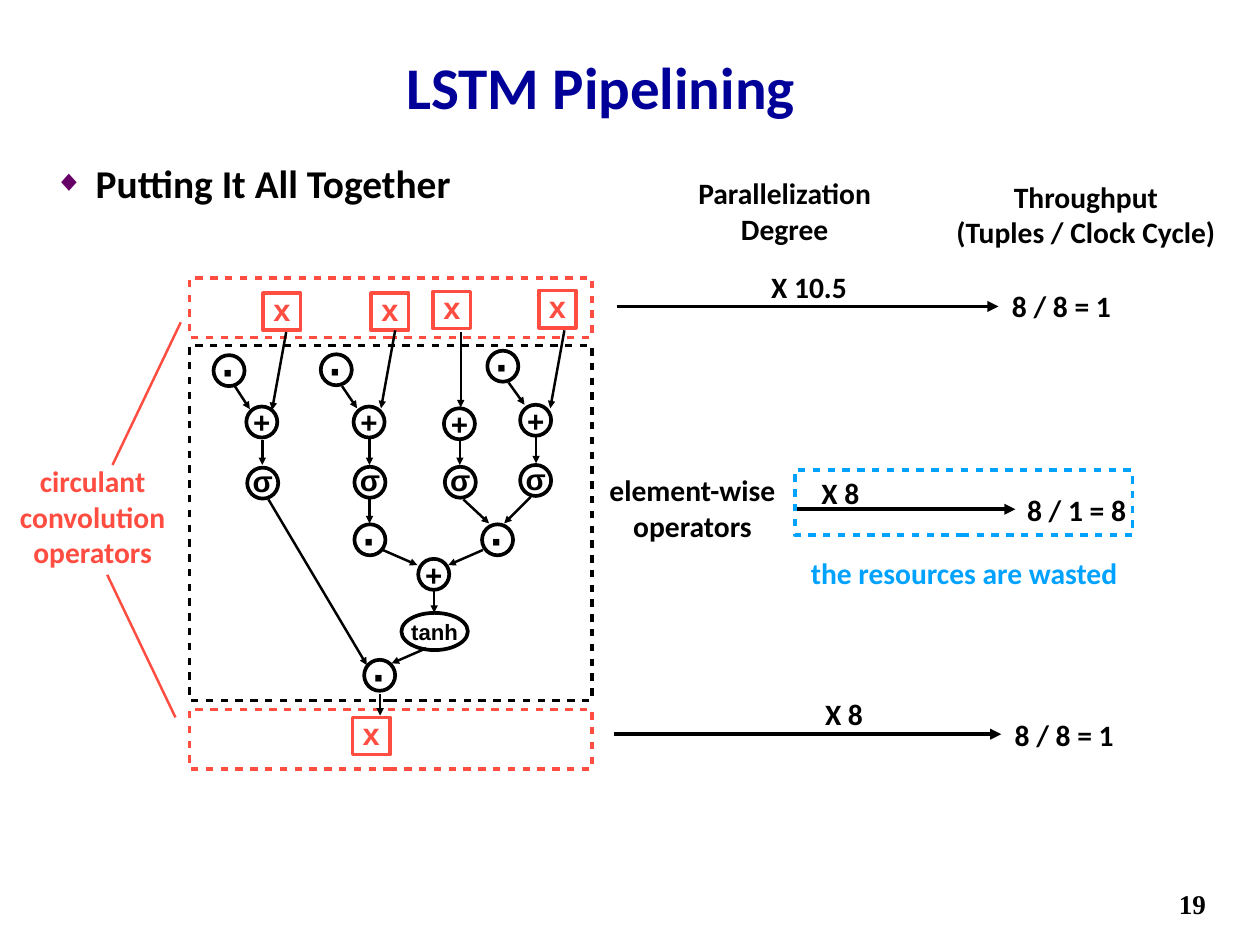
from dataclasses import dataclass
from lxml import etree
from pptx import Presentation
from pptx.dml.color import RGBColor
from pptx.enum.shapes import MSO_CONNECTOR, MSO_SHAPE
from pptx.enum.text import MSO_ANCHOR, MSO_AUTO_SIZE, PP_ALIGN
from pptx.oxml.ns import qn
from pptx.util import Inches, Pt

RECT, OVAL = MSO_SHAPE.RECTANGLE, MSO_SHAPE.OVAL
STRAIGHT = MSO_CONNECTOR.STRAIGHT
MIDDLE, TOP = MSO_ANCHOR.MIDDLE, MSO_ANCHOR.TOP
LEFT, CENTER, RIGHT = PP_ALIGN.LEFT, PP_ALIGN.CENTER, PP_ALIGN.RIGHT
NO_FIT = MSO_AUTO_SIZE.NONE


@dataclass(frozen=True)
class Theme:
    navy: str = "000099"
    black: str = "000000"
    red: str = "FF4D41"
    blue: str = "00A2FF"
    purple: str = "660066"
    text: str = "Calibri"
    symbol: str = "Arial"
    number: str = "Times New Roman"
    title_pt: int = 48
    body_pt: int = 32
    label_pt: int = 24
    number_pt: int = 22
    thin: int = 2
    thick: int = 3


T = Theme()


def write(sp, lines, size, color, font=T.text, align=CENTER, inset=0, bottom=0):
    """Fill a shape with bold one-run paragraphs."""
    tf = sp.text_frame
    tf.auto_size, tf.word_wrap, tf.vertical_anchor = NO_FIT, False, MIDDLE
    tf.margin_left = tf.margin_right = tf.margin_top = Inches(inset)
    tf.margin_bottom = Inches(inset + bottom)
    for i, line in enumerate(lines):
        p = tf.paragraphs[0] if i == 0 else tf.add_paragraph()
        p.alignment = align
        r = p.add_run()
        r.text = line
        r.font.name, r.font.size, r.font.bold = font, Pt(size), True
        r.font.color.rgb = RGBColor.from_string(color)
    return tf


def connect(x1, y1, x2, y2, width=T.thin, color=T.black, arrow=True):
    """Draw a straight line, with an arrowhead at its end if wanted."""
    cx = slide.shapes.add_connector(
        STRAIGHT, Inches(x1), Inches(y1), Inches(x2), Inches(y2))
    cx.line.width = Pt(width)
    cx.line.color.rgb = RGBColor.from_string(color)
    if arrow:
        etree.SubElement(cx.line._get_or_add_ln(), qn("a:tailEnd"), type="triangle")
    etree.SubElement(cx._element.spPr, qn("a:effectLst"))


prs = Presentation()
prs.slide_width, prs.slide_height = Inches(14.22), Inches(10.67)
slide = prs.slides.add_slide(prs.slide_layouts[1])

# Title
title = slide.shapes.title
title.left, title.top, title.width, title.height = map(Inches, (0.38, 0.5, 12.8, 1.05))
tf = write(title, ["LSTM Pipelining"], T.title_pt, T.navy)
tf.word_wrap = True
tf.paragraphs[0].line_spacing = 0.9

# Bulleted heading
body = slide.placeholders[1]
body.left, body.top, body.width, body.height = map(Inches, (0.54, 1.62, 5, 0.68))
tf = write(body, ["Putting It All Together"], T.body_pt, T.black, align=LEFT, inset=0.07)
tf.word_wrap, tf.vertical_anchor = True, TOP
p = tf.paragraphs[0]
p.line_spacing, p.space_before = 1.2, Pt(0)
pPr = p._p.get_or_add_pPr()
pPr.set("marL", str(Inches(0.47)))
pPr.set("indent", str(-Inches(0.47)))
bullet_color = etree.SubElement(pPr, qn("a:buClr"))
etree.SubElement(bullet_color, qn("a:srgbClr"), val=T.purple)
etree.SubElement(pPr, qn("a:buSzPct"), val="75000")
etree.SubElement(pPr, qn("a:buChar"), char="◆")

# Dashed frames: element-wise stage, two convolution stages, wasted resources
for x, y, w, h, color in [
    (2.14, 3.9, 4.54, 4.01, T.black),
    (2.14, 8.01, 4.54, 0.67, T.red),
    (2.14, 3.14, 4.54, 0.67, T.red),
    (8.97, 5.31, 3.81, 0.73, T.blue),
]:
    sp = slide.shapes.add_shape(RECT, Inches(x), Inches(y), Inches(w), Inches(h))
    sp.shadow.inherit = False
    sp.fill.background()
    sp.line.color.rgb = RGBColor.from_string(color)
    sp.line.width = Pt(T.thick)
    dash = etree.SubElement(sp.line._get_or_add_ln(), qn("a:custDash"))
    etree.SubElement(dash, qn("a:ds"), d="200000", sp="200000")

# Operator nodes: shape, width, height, type size, bottom inset, colour, places
for symbol, kind, w, h, size, bottom, color, places in [
    ("x", RECT, 0.42, 0.42, 25, 0.06, T.red,
     [(2.97, 3.31), (4.19, 3.31), (4.89, 3.29), (6.08, 3.28), (3.98, 8.1)]),
    ("·", OVAL, 0.35, 0.35, 36, 0, T.black,
     [(2.41, 4.01), (3.62, 4), (5.5, 3.96), (4, 5.92), (5.44, 5.92), (4.11, 7.45)]),
    ("+", OVAL, 0.35, 0.35, 24, 0, T.black,
     [(2.78, 4.59), (3.99, 4.59), (5.01, 4.61), (5.87, 4.57), (4.72, 6.31)]),
    ("σ", OVAL, 0.35, 0.35, 24, 0.05, T.black,
     [(2.79, 5.28), (4, 5.27), (5.02, 5.27), (5.87, 5.25)]),
    ("tanh", OVAL, 0.75, 0.42, 18, 0, T.black, [(4.53, 6.92)]),
]:
    for x, y in places:
        sp = slide.shapes.add_shape(kind, Inches(x), Inches(y), Inches(w), Inches(h))
        sp.shadow.inherit = False
        sp.fill.background()
        sp.line.color.rgb = RGBColor.from_string(color)
        sp.line.width = Pt(T.thick)
        write(sp, [symbol], size, color, T.symbol, bottom=bottom)

# Data flow between the nodes
for ends in [
    # convolutions to sums
    (3.23, 3.75, 3.07, 4.63), (4.46, 3.73, 4.3, 4.61),
    (5.2, 3.75, 5.2, 4.6), (6.37, 3.73, 6.21, 4.61),
    # products to sums
    (2.65, 4.36, 2.82, 4.62), (3.86, 4.36, 4.03, 4.61), (5.74, 4.32, 5.92, 4.57),
    # sums to sigmoids
    (2.96, 4.97, 2.96, 5.25), (4.17, 4.96, 4.17, 5.25),
    (5.19, 4.97, 5.19, 5.25), (6.05, 4.94, 6.05, 5.23),
    # sigmoids to products
    (3.03, 5.64, 4.14, 7.51), (4.17, 5.63, 4.17, 5.91),
    (5.23, 5.64, 5.52, 5.91), (5.99, 5.61, 5.69, 5.91),
    # cell state and output
    (4.32, 6.21, 4.71, 6.38), (5.45, 6.21, 5.06, 6.38),
    (4.9, 6.67, 4.9, 6.92), (4.81, 7.32, 4.42, 7.49), (4.29, 7.84, 4.29, 8.08),
]:
    connect(*ends)

# Leaders from the convolution label to its frames
connect(1.27, 5.25, 2.04, 3.64, color=T.red, arrow=False)
connect(1.21, 6.49, 1.98, 8.1, color=T.red, arrow=False)

# Throughput arrows
for x1, x2, y in [(6.96, 11.27, 3.46), (9, 11.46, 5.75), (6.93, 11.3, 8.29)]:
    connect(x1, y, x2, y, width=T.thick)

# Labels
for x, y, w, h, color, lines in [
    (6.78, 5.27, 2.07, 0.92, T.black, ["element-wise", "operators"]),
    (0.05, 5.17, 1.99, 1.32, T.red, ["circulant", "convolution", "operators"]),
    (7.78, 1.92, 2.15, 0.92, T.black, ["Parallelization", "Degree"]),
    (10.73, 1.96, 3.05, 0.92, T.black, ["Throughput", "(Tuples / Clock Cycle)"]),
    (8.64, 2.98, 0.98, 0.51, T.black, ["X 10.5"]),
    (9.21, 5.31, 0.55, 0.51, T.black, ["X 8"]),
    (9.25, 7.8, 0.55, 0.51, T.black, ["X 8"]),
    (11.36, 3.2, 1.24, 0.51, T.black, ["8 / 8 = 1"]),
    (11.53, 5.5, 1.24, 0.51, T.black, ["8 / 1 = 8"]),
    (11.39, 8.04, 1.24, 0.51, T.black, ["8 / 8 = 1"]),
    (9.09, 6.21, 3.58, 0.51, T.blue, ["the resources are wasted"]),
]:
    sp = slide.shapes.add_textbox(Inches(x), Inches(y), Inches(w), Inches(h))
    write(sp, lines, T.label_pt, color, inset=0.06)

# Slide number
sp = slide.shapes.add_textbox(Inches(13.29), Inches(10.03), Inches(0.32), Inches(0.35))
write(sp, ["19"], T.number_pt, T.black, T.number, RIGHT)

prs.save("out.pptx")
